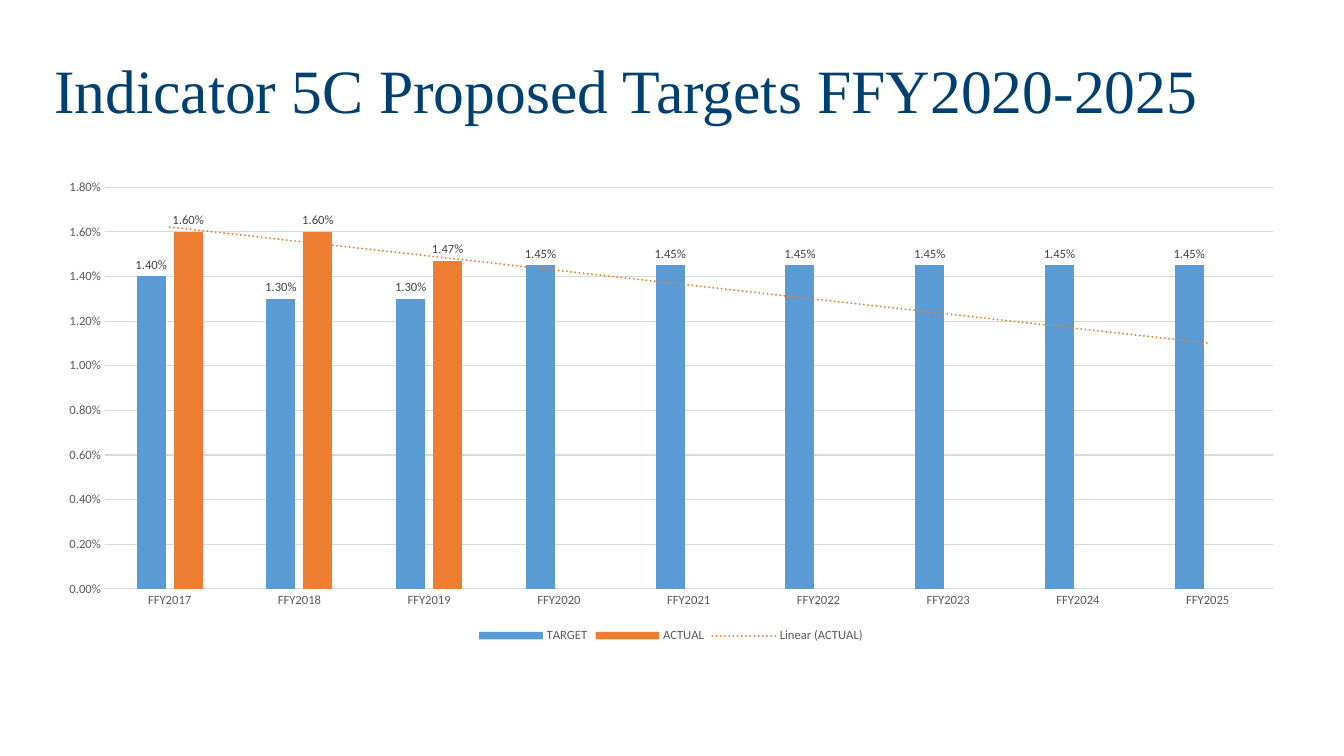
from lxml import etree
from pptx import Presentation
from pptx import util as u
from pptx.chart.data import CategoryChartData
from pptx.dml.color import RGBColor
from pptx.enum import chart as ch, text
from pptx.oxml import parse_xml
from pptx.oxml.ns import qn

LEFT, WIDTH = u.Inches(0.44), u.Inches(12.43)
BLUE, ORANGE, GRID, GREY, DARK = "5B9BD5", "ED7D31", "D9D9D9", "595959", "404040"
PERCENT = "0.00%"
YEARS = [f"FFY{year}" for year in range(2017, 2026)]
TARGET = [0.014, 0.013, 0.013] + [0.0145] * 6
ACTUAL = [0.016, 0.016, 0.0147] + [None] * 6

TREND = """<c:trendline
 xmlns:c="http://schemas.openxmlformats.org/drawingml/2006/chart"
 xmlns:a="http://schemas.openxmlformats.org/drawingml/2006/main">
<c:spPr><a:ln w="19050" cap="rnd"><a:solidFill><a:srgbClr val="{}"/></a:solidFill>
<a:prstDash val="sysDot"/></a:ln></c:spPr>
<c:trendlineType val="linear"/><c:dispRSqr val="0"/><c:dispEq val="0"/>
</c:trendline>"""


def color(value):
    return RGBColor.from_string(value)


def set_font(font, size, value, name="Calibri"):
    font.size = u.Pt(size)
    font.name = name
    font.color.rgb = color(value)


def set_line(line, value):
    line.color.rgb = color(value)
    line.width = u.Pt(0.75)


def add_title(slide, words):
    box = slide.shapes.add_textbox(LEFT, u.Inches(0.16), WIDTH, u.Inches(1.53))
    frame = box.text_frame
    frame.word_wrap = True
    frame.vertical_anchor = text.MSO_ANCHOR.MIDDLE
    frame.text = words
    line = frame.paragraphs[0]
    line.line_spacing = 0.9
    set_font(line.runs[0].font, 44, "004071", "Times New Roman")


def style_axis(axis):
    axis.major_tick_mark = axis.minor_tick_mark = ch.XL_TICK_MARK.NONE
    set_font(axis.tick_labels.font, 9, GREY)


def style_series(series, value):
    series.format.fill.solid()
    series.format.fill.fore_color.rgb = color(value)
    series.invert_if_negative = False
    labels = series.data_labels
    labels.show_value = True
    labels.position = ch.XL_LABEL_POSITION.OUTSIDE_END
    labels.number_format = PERCENT
    labels.number_format_is_linked = False
    set_font(labels.font, 9, DARK)


def add_trend(series, value):
    # The trend line must come just before the categories
    series._element.find(qn("c:cat")).addprevious(parse_xml(TREND.format(value)))


def add_columns(slide):
    data = CategoryChartData(number_format=PERCENT)
    data.categories = YEARS
    data.add_series("TARGET", TARGET)
    data.add_series("ACTUAL", ACTUAL)
    chart = slide.shapes.add_chart(ch.XL_CHART_TYPE.COLUMN_CLUSTERED, LEFT,
                                   u.Inches(1.69), WIDTH, u.Inches(4.73), data).chart
    set_font(chart.font, 10, "000000")
    chart.has_title = False

    # Columns and trend
    plot = chart.plots[0]
    plot.gap_width, plot.overlap = 219, -27
    plot.vary_by_categories = False
    for series, value in zip(plot.series, (BLUE, ORANGE)):
        style_series(series, value)
    add_trend(plot.series[1], ORANGE)

    # Axes
    years, rates = chart.category_axis, chart.value_axis
    style_axis(years)
    style_axis(rates)
    set_line(years.format.line, GRID)
    rates.format.line.fill.background()
    rates.has_major_gridlines = True
    set_line(rates.major_gridlines.format.line, GRID)
    rates.tick_labels.number_format = PERCENT
    rates.tick_labels.number_format_is_linked = False

    # Legend
    chart.has_legend = True
    chart.legend.position = ch.XL_LEGEND_POSITION.BOTTOM
    chart.legend.include_in_layout = False
    set_font(chart.legend.font, 9, GREY)


def main():
    deck = Presentation()
    deck.slide_width, deck.slide_height = u.Inches(13.33), u.Inches(7.5)
    slide = deck.slides.add_slide(deck.slide_layouts[6])
    add_title(slide, "Indicator 5C Proposed Targets FFY2020-2025")
    add_columns(slide)
    deck.save("out.pptx")


if __name__ == "__main__":
    main()
